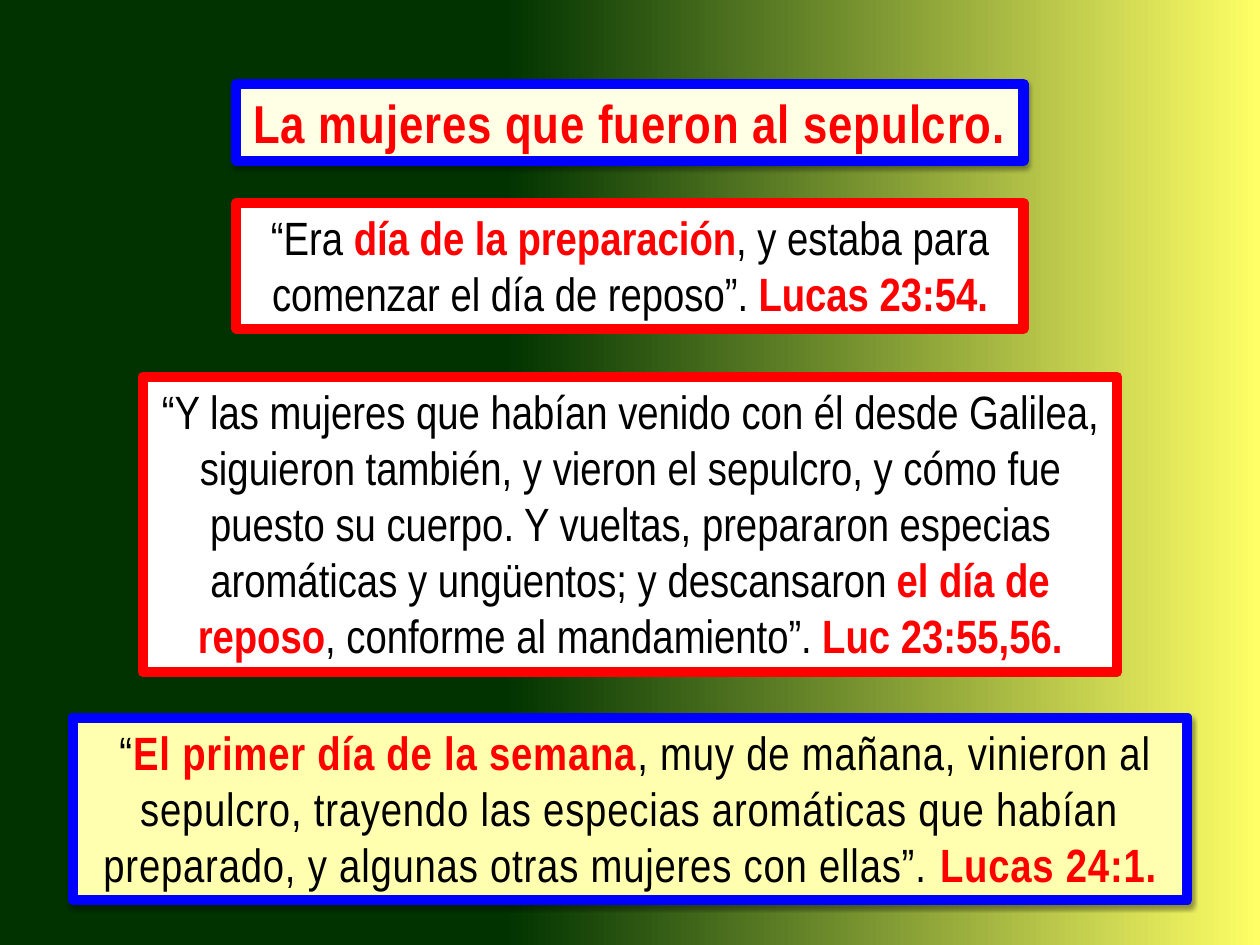
"""Build a slide of four framed Bible passages on a green to yellow gradient."""
from copy import deepcopy

from pptx import Presentation
from pptx import util as u
from pptx.dml.color import RGBColor
from pptx.enum import shapes, text
from pptx.oxml import parse_xml
from pptx.oxml.ns import nsdecls, qn

SLIDE_WIDTH = 10.5
SLIDE_HEIGHT = SLIDE_WIDTH * 3 / 4
COLORS = {
    "black": "000000", "red": "FF0000", "blue": "0000FF", "white": "FFFFFF",
    "cream": "FFFFE5", "pale": "FFFFAF", "yellow": "FFFF66", "green": "003300",
}
GRADIENT = [(0, "yellow"), (0.6, "green"), (0.99, "green")]
PLAIN = {"color": "black", "bold": False, "outline": 1.5}
STRONG = {"color": "red", "bold": True, "outline": 0.25}
HEADING = {"color": "red", "bold": True, "outline": 1}
BLUE_FRAME = {"line": "blue", "shadow": True, "spacing": 0.5}
RED_FRAME = {"line": "red", "fill": "white", "shadow": False, "spacing": 0}

BOXES = [
    {**BLUE_FRAME, "fill": "pale", "top": 5.98, "width": 9.29, "height": 1.52, "size": 28,
     "runs": [(" “", PLAIN), ("El primer día de la semana", STRONG),
              (", muy de mañana, vinieron al sepulcro, trayendo las especias aromáticas "
               "que habían preparado, y algunas otras mujeres con ellas”. ", PLAIN),
              ("Lucas 24:1.", STRONG)]},
    {**BLUE_FRAME, "fill": "cream", "top": 0.7, "width": 6.56, "height": 0.64, "size": 32,
     "runs": [("La mujeres que fueron al sepulcro.", HEADING)]},
    {**RED_FRAME, "top": 1.69, "width": 6.56, "height": 1.05, "size": 28,
     "runs": [("“Era ", PLAIN), ("día de la preparación", STRONG),
              (", y estaba para comenzar el día de reposo”. ", PLAIN),
              ("Lucas 23:54.", STRONG)]},
    {**RED_FRAME, "top": 3.14, "width": 8.12, "height": 2.46, "size": 28,
     "runs": [("“Y las mujeres que habían venido con él desde Galilea, siguieron también, "
               "y vieron el sepulcro, y cómo fue puesto su cuerpo. Y vueltas, prepararon "
               "especias aromáticas y ungüentos; y descansaron ", PLAIN),
              ("el día de reposo", STRONG), (", conforme al mandamiento”. ", PLAIN),
              ("Luc 23:55,56.", STRONG)]},
]


def rgb(name):
    """Return the named colour."""
    return RGBColor.from_string(COLORS[name])


def set_attributes(target, values):
    """Set each attribute of the target from a dict."""
    for name, value in values.items():
        setattr(target, name, value)


def paint_background(slide):
    """Fill the background with the three-stop gradient."""
    fill = slide.background.fill
    fill.gradient()
    fill.gradient_angle = 180
    stop_list = slide.element.find(".//" + qn("a:gsLst"))
    stop_list.append(deepcopy(stop_list[-1]))
    for stop, (position, color) in zip(fill.gradient_stops, GRADIENT):
        stop.position = position
        stop.color.rgb = rgb(color)


def add_shadow(shape):
    """Add a soft shadow below the shape."""
    effects = shape.element.spPr.find(qn("a:effectLst"))
    effects.append(parse_xml(
        f'<a:outerShdw {nsdecls("a")} blurRad="{u.Pt(3.1)}" dist="{u.Pt(1.6)}" '
        f'dir="5400000" rotWithShape="0"><a:srgbClr val="{COLORS["black"]}">'
        '<a:alpha val="38000"/></a:srgbClr></a:outerShdw>'))


def add_run(paragraph, wording, style, size, spacing):
    """Add one run with its colour, outline and letter spacing."""
    run = paragraph.add_run()
    run.text = wording
    set_attributes(run.font, {"name": "Arial Narrow", "size": u.Pt(size), "bold": style["bold"]})
    run.font.color.rgb = rgb(style["color"])
    properties = run.font._element
    if spacing:
        properties.set("spc", str(int(spacing * 100)))
    properties.insert(0, parse_xml(
        f'<a:ln {nsdecls("a")} w="{u.Pt(style["outline"])}"><a:solidFill>'
        f'<a:srgbClr val="{COLORS[style["color"]]}"/></a:solidFill></a:ln>'))


def add_box(slide, box):
    """Add a framed passage, centred across the slide."""
    left = (SLIDE_WIDTH - box["width"]) / 2
    shape = slide.shapes.add_shape(
        shapes.MSO_SHAPE.RECTANGLE, u.Inches(left), u.Inches(box["top"]),
        u.Inches(box["width"]), u.Inches(box["height"]))
    shape.fill.solid()
    shape.fill.fore_color.rgb = rgb(box["fill"])
    shape.line.color.rgb = rgb(box["line"])
    shape.line.width = u.Pt(6)
    shape.shadow.inherit = False
    if box["shadow"]:
        add_shadow(shape)
    set_attributes(shape.text_frame, {
        "word_wrap": True, "auto_size": text.MSO_AUTO_SIZE.SHAPE_TO_FIT_TEXT,
        "vertical_anchor": text.MSO_ANCHOR.TOP,
        "margin_left": u.Inches(0.1), "margin_right": u.Inches(0.1),
        "margin_top": u.Inches(0.05), "margin_bottom": u.Inches(0.05)})
    paragraph = shape.text_frame.paragraphs[0]
    paragraph.alignment = text.PP_ALIGN.CENTER
    for wording, style in box["runs"]:
        add_run(paragraph, wording, style, box["size"], box["spacing"])


def main():
    """Build and save the slide."""
    presentation = Presentation()
    set_attributes(presentation, {
        "slide_width": u.Inches(SLIDE_WIDTH), "slide_height": u.Inches(SLIDE_HEIGHT)})
    slide = presentation.slides.add_slide(presentation.slide_layouts[6])
    paint_background(slide)
    for box in BOXES:
        add_box(slide, box)
    presentation.save("out.pptx")


if __name__ == "__main__":
    main()
